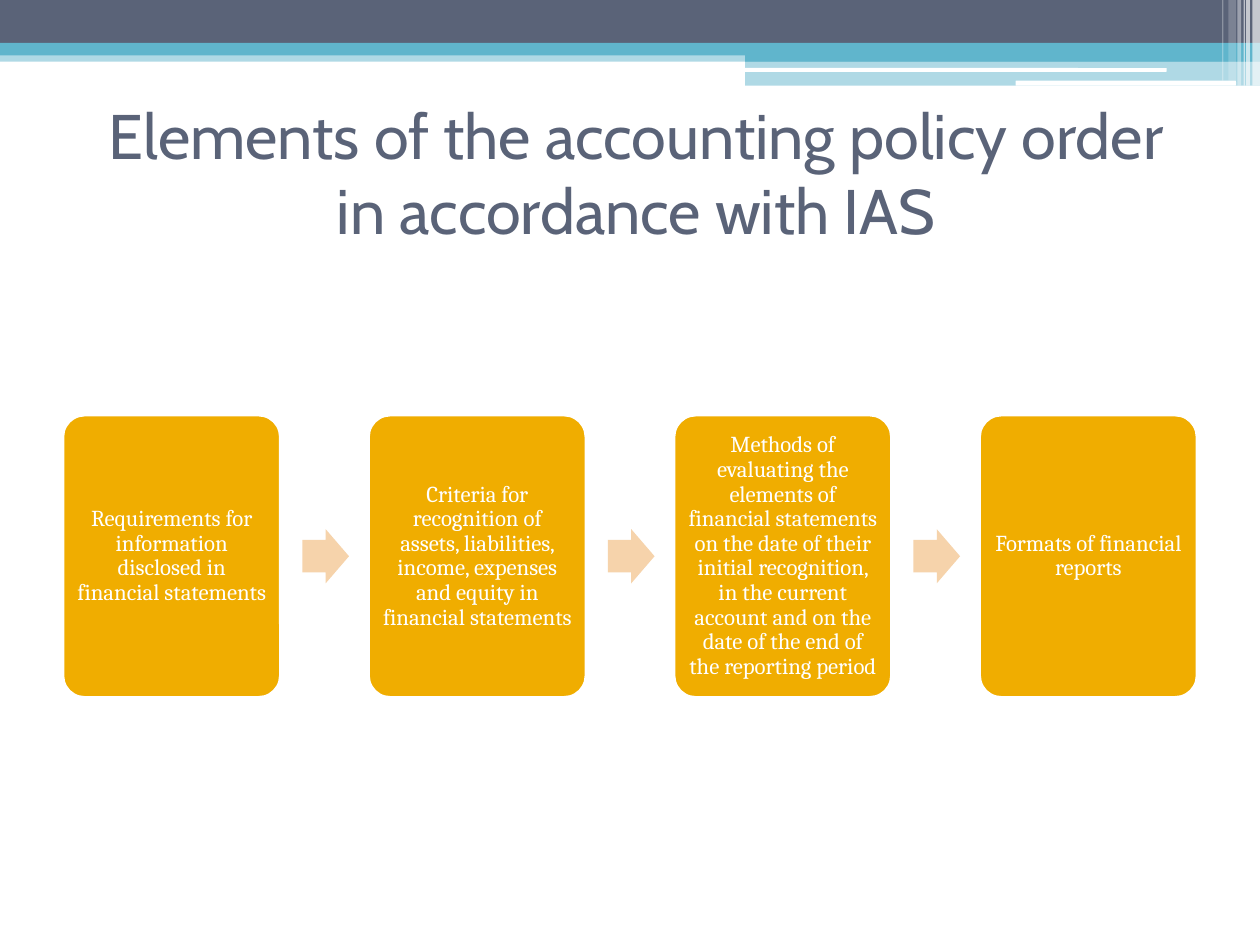
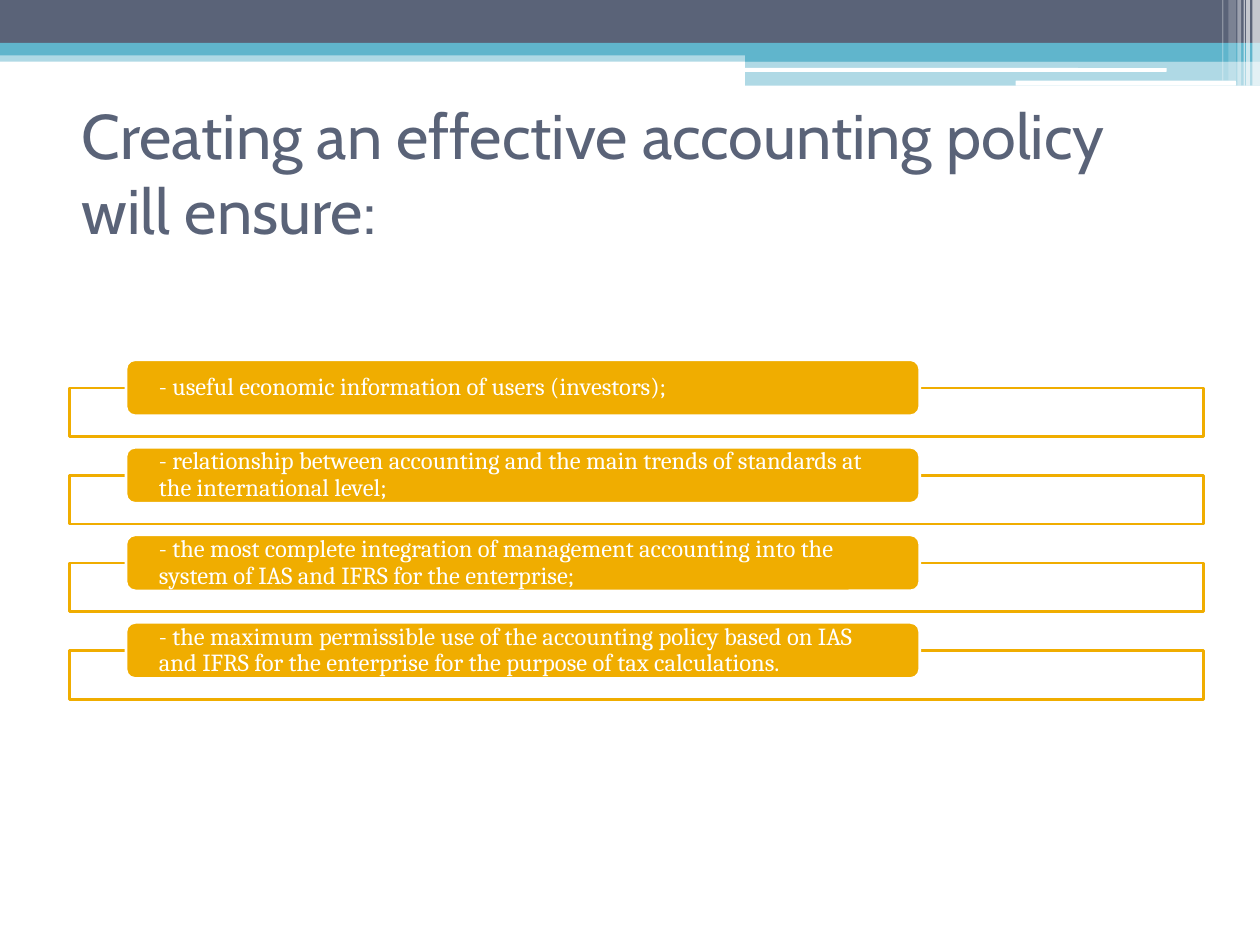
from pptx import Presentation
from pptx.dml.color import RGBColor
from pptx.enum.shapes import MSO_SHAPE as Shape
from pptx.enum.text import MSO_ANCHOR as Anchor, MSO_AUTO_SIZE as AutoSize, PP_ALIGN as Align
from pptx.oxml.ns import qn
from pptx.util import Inches, Pt
from lxml import etree

# Colours and fonts
SLATE = RGBColor(0x5A, 0x63, 0x78)
TEAL = RGBColor(0x60, 0xB5, 0xCC)
AMBER = RGBColor(0xF0, 0xAD, 0x00)
PEACH = RGBColor(0xF6, 0xD3, 0xAB)
WHITE = RGBColor(0xFF, 0xFF, 0xFF)
HEADING_FONT, BODY_FONT = "Cabin", "Cambria"

# Grid of 100 columns by 75 rows
COLUMNS, ROWS = 100, 75
WIDTH, HEIGHT = Inches(10), Inches(7.5)

# Header bands: column, row, columns, rows, colour, opacity in percent, rounded
BANDS = [
    (0, 4, 100, 0.9, TEAL, 50, False),
    (0, 0, 100, 3.4, SLATE, 100, False),
    (0, 3.4, 100, 1, TEAL, 100, False),
    (59.15, 3.9, 40.85, 1, TEAL, 100, False),
    (59.15, 4.85, 40.85, 1.95, TEAL, 50, False),
    (59.1, 5.4, 33.5, 0.3, WHITE, 100, True),
    (80.6, 6.4, 17.5, 0.4, WHITE, 100, True),
]
# Stripes at the right edge: column, columns, rows, opacity in percent
STRIPES = [
    (99.4, 0.6, 6.8, 65), (98.9, 0.3, 6.8, 65), (98.7, 0.1, 6.8, 60),
    (98.2, 0.3, 6.8, 40), (97.5, 0.6, 6.4, 20), (97, 0.1, 6.4, 30),
]

POLICY_ELEMENTS = [
    "Requirements for information disclosed in financial statements",
    "Criteria for recognition of assets, liabilities, income, expenses and equity in financial statements",
    "Methods of evaluating the elements of financial statements on the date of their initial recognition, "
    "in the current account and on the date of the end of the reporting period",
    "Formats of financial reports",
]
POLICY_BENEFITS = [
    "- useful economic information of users (investors);",
    "- relationship between accounting and the main trends of standards at the international level;",
    "- the most complete integration of management accounting into the system of IAS and IFRS for the enterprise;",
    "- the maximum permissible use of the accounting policy based on IAS and IFRS for the enterprise "
    "for the purpose of tax calculations.",
]


def apply(target, values):
    for name, value in values.items():
        setattr(target, name, value)


class SlideBuilder:
    """Holds the deck's style and the slide being built."""

    def __init__(self, deck):
        self.deck = deck
        self.page = None

    def cells(self, column, row, columns, rows):
        return dict(left=round(WIDTH * column / COLUMNS), top=round(HEIGHT * row / ROWS),
                    width=round(WIDTH * columns / COLUMNS), height=round(HEIGHT * rows / ROWS))

    def start(self, title, align):
        self.page = self.deck.slides.add_slide(self.deck.slide_layouts[5])
        self.header()
        box = self.page.shapes.title
        apply(box, self.cells(5.5, 7.8, 90, 11.7))
        self.put_text(box, title, HEADING_FONT, 36, SLATE, align, (0.1, 0.05))

    def header(self):
        for *place, colour, opacity, rounded in BANDS:
            kind = Shape.ROUNDED_RECTANGLE if rounded else Shape.RECTANGLE
            self.shape(kind, place, colour, opacity=opacity)
        for column, columns, rows, opacity in STRIPES:
            self.shape(Shape.RECTANGLE, (column, 0, columns, rows), WHITE, opacity=opacity)

    def shape(self, kind, place, colour, line=None, opacity=100, adjust=()):
        box = self.page.shapes.add_shape(kind, **self.cells(*place))
        box.shadow.inherit = False
        box.fill.solid()
        box.fill.fore_color.rgb = colour
        if opacity < 100:
            tint = box.element.spPr.find(qn("a:solidFill"))[0]
            etree.SubElement(tint, qn("a:alpha"), val=str(opacity * 1000))
        if line is None:
            box.line.fill.background()
        else:
            box.line.color.rgb = line
            box.line.width = Pt(1.5)
        for index, value in enumerate(adjust):
            box.adjustments[index] = value
        return box

    def put_text(self, box, text, font, size, colour, align, inset, spacing=1.0):
        across, down = map(Inches, inset)
        frame = box.text_frame
        apply(frame, dict(word_wrap=True, auto_size=AutoSize.NONE, vertical_anchor=Anchor.MIDDLE,
                          margin_left=across, margin_right=across,
                          margin_top=down, margin_bottom=down))
        para = frame.paragraphs[0]
        apply(para, dict(alignment=align, line_spacing=spacing))
        span = para.add_run()
        span.text = text
        apply(span.font, dict(name=font, size=Pt(size)))
        span.font.color.rgb = colour

    def panel(self, place, text, size, align, inset, adjust=()):
        box = self.shape(Shape.ROUNDED_RECTANGLE, place, AMBER, WHITE, adjust=adjust)
        self.put_text(box, text, BODY_FONT, size, WHITE, align, inset, 0.9)

    def process(self, steps):
        """Equal cards across the slide, with an arrow in each gap."""
        left, span, card = 5, 90, 17.25
        pitch = (span - card) / (len(steps) - 1)
        for index, step in enumerate(steps):
            column = left + index * pitch
            self.panel((column, 32.95, card, 22.4), step, 13, Align.CENTER, (0.05, 0.05), (0.1,))
            if index < len(steps) - 1:
                self.shape(Shape.RIGHT_ARROW, (column + 19, 42, 3.7, 4.3), PEACH, adjust=(0.6, 0.5))

    def labelled_frames(self, labels):
        """Stacked outlined frames, each with a label over its top edge."""
        pitch = 6.95
        for index, label in enumerate(labels):
            row = 28.55 + index * pitch
            self.shape(Shape.RECTANGLE, (5.5, row + 2.25, 90, 3.85), WHITE, AMBER, opacity=90)
            self.panel((10, row, 63, 4.45), label, 14, Align.LEFT, (0.24, 0))


def main():
    deck = Presentation()
    apply(deck, dict(slide_width=WIDTH, slide_height=HEIGHT))
    builder = SlideBuilder(deck)

    # Slide 1: elements of the policy order
    builder.start("Elements of the accounting policy order in accordance with IAS", Align.CENTER)
    builder.process(POLICY_ELEMENTS)

    # Slide 2: what an effective policy ensures
    builder.start("Creating an effective accounting policy will ensure:", Align.LEFT)
    builder.labelled_frames(POLICY_BENEFITS)

    deck.save("out.pptx")


if __name__ == "__main__":
    main()
